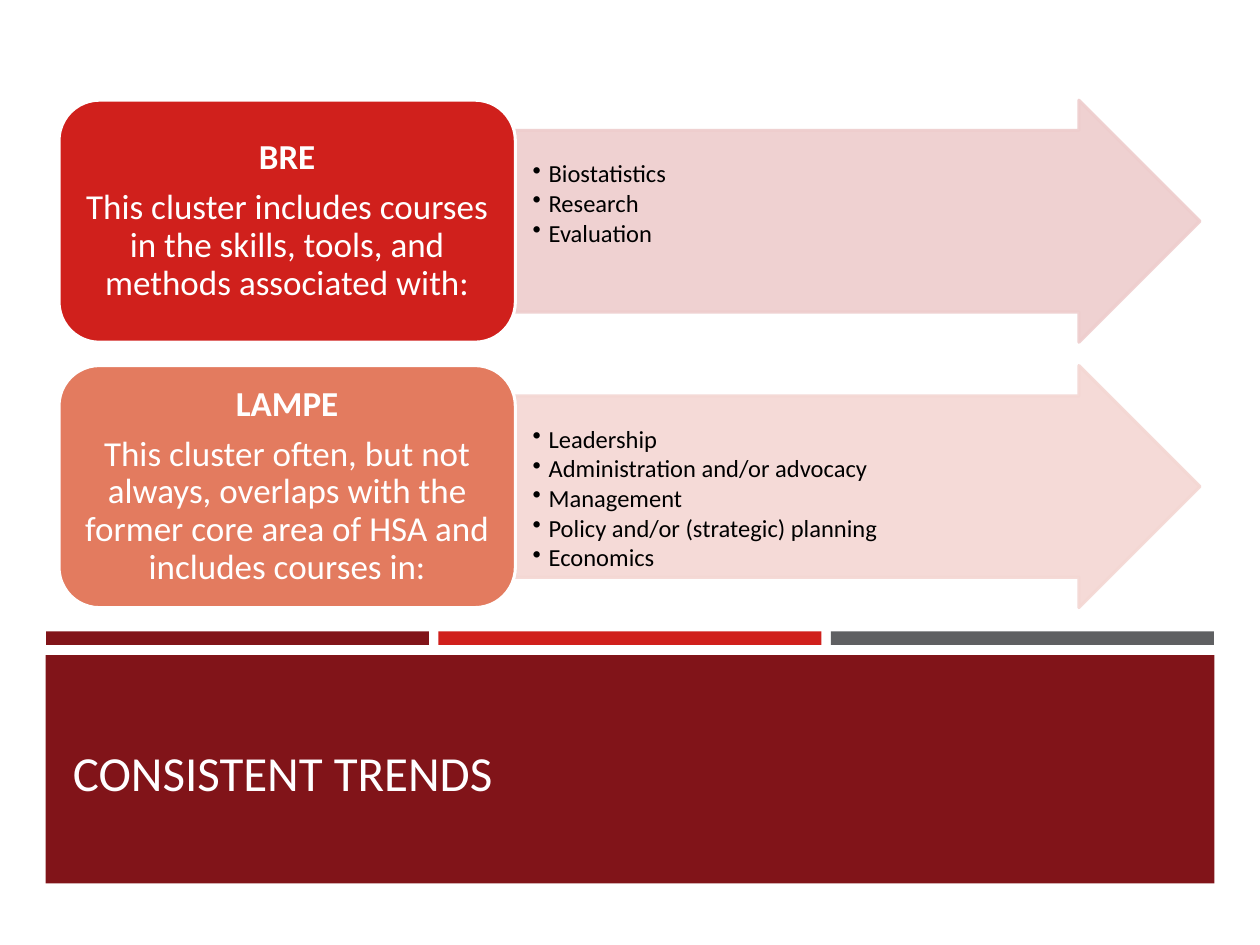
import dataclasses

import lxml.etree
import pptx
import pptx.dml.color
import pptx.enum.shapes
import pptx.enum.text
import pptx.oxml.ns
import pptx.util

Cm, Pt = pptx.util.Cm, pptx.util.Pt
SHAPES = pptx.enum.shapes.MSO_SHAPE
ANCHOR = pptx.enum.text.MSO_ANCHOR
ALIGN = pptx.enum.text.PP_ALIGN
qn = pptx.oxml.ns.qn


@dataclasses.dataclass(frozen=True)
class Theme:
    font: str = "Calibri"
    maroon: str = "811419"
    red: str = "D0201C"
    gray: str = "5F6062"
    coral: str = "E37B5F"
    pale_red: str = "EECDCD"
    pale_coral: str = "F4D7D3"
    white: str = "FFFFFF"
    title_white: str = "FFFEFF"
    black: str = "000000"
    title_size: float = 28
    cluster_size: float = 20
    bullet_size: float = 14
    outline: float = 1.75


class SlideBuilder:
    def __init__(self, page, theme):
        self.page = page
        self.theme = theme

    def shape(self, kind, left, top, width, height, fill, line=None, opacity=None):
        shape = self.page.shapes.add_shape(kind, Cm(left), Cm(top), Cm(width), Cm(height))
        shape.shadow.inherit = False
        shape.fill.solid()
        shape.fill.fore_color.rgb = pptx.dml.color.RGBColor.from_string(fill)
        if line:
            shape.line.color.rgb = pptx.dml.color.RGBColor.from_string(line)
            shape.line.width = Pt(self.theme.outline)
        else:
            shape.line.fill.background()
        if opacity:
            for color in shape.element.spPr.iter(qn("a:srgbClr")):
                lxml.etree.SubElement(color, qn("a:alpha"), val=str(opacity * 1000))
        return shape

    def frame(self, shape, anchor, side, top, bottom):
        frame = shape.text_frame
        frame.word_wrap = True
        frame.vertical_anchor = anchor
        frame.margin_left = frame.margin_right = Cm(side)
        frame.margin_top, frame.margin_bottom = Cm(top), Cm(bottom)
        return frame

    def style(self, para, size, color, align, after=0, spacing=1.0, bold=False):
        para.alignment = align
        para.line_spacing = spacing
        para.space_after = Pt(after)
        para.font.name = self.theme.font
        para.font.size = Pt(size)
        para.font.bold = bold
        para.font.color.rgb = pptx.dml.color.RGBColor.from_string(color)

    def paragraphs(self, frame, texts):
        for number, text in enumerate(texts):
            para = frame.add_paragraph() if number else frame.paragraphs[0]
            para.text = text
            yield para

    def title(self, text, left, top, width, height):
        box = self.page.shapes.add_textbox(Cm(left), Cm(top), Cm(width), Cm(height))
        frame = self.frame(box, ANCHOR.BOTTOM, 0.25, 0.13, 0.13)
        for para in self.paragraphs(frame, [text]):
            self.style(para, self.theme.title_size, self.theme.title_white, ALIGN.LEFT)

    def arrow(self, left, top, width, height, color, bullets):
        arrow = self.shape(SHAPES.RIGHT_ARROW, left, top, width, height, color, color, 90)
        arrow.adjustments[0], arrow.adjustments[1] = 0.75, 0.5
        frame = self.frame(arrow, ANCHOR.TOP, 0.03, 0.63, 0.03)
        for para in self.paragraphs(frame, bullets):
            para.level = 1
            properties = para._p.get_or_add_pPr()
            properties.set("marL", str(Cm(0.64)))
            properties.set("indent", str(-Cm(0.32)))
            lxml.etree.SubElement(properties, qn("a:buChar"), char="•")
            self.style(para, self.theme.bullet_size, self.theme.black, ALIGN.LEFT, 1.8, 0.9)

    def cluster(self, left, top, width, height, color, name, description):
        card = self.shape(SHAPES.ROUNDED_RECTANGLE, left, top, width, height,
                          color, self.theme.white)
        frame = self.frame(card, ANCHOR.MIDDLE, 0.2, 0.1, 0.1)
        for para in self.paragraphs(frame, [name, description]):
            self.style(para, self.theme.cluster_size, self.theme.white, ALIGN.CENTER,
                       6.8, 0.9, bold=para.text == name)


def main():
    theme = Theme()
    deck = pptx.Presentation()
    deck.slide_width, deck.slide_height = Cm(25.4), Cm(19.05)
    builder = SlideBuilder(deck.slides.add_slide(deck.slide_layouts[6]), theme)

    # Accent bars above the title band
    for column, color in enumerate([theme.maroon, theme.red, theme.gray]):
        builder.shape(SHAPES.RECTANGLE, 0.93 + column * 7.91, 12.73, 7.72, 0.27, color)

    # Title band
    builder.shape(SHAPES.RECTANGLE, 0.92, 13.21, 23.56, 4.6, theme.maroon)
    builder.title("CONSISTENT TRENDS", 1.22, 13.46, 22.99, 2.82)

    # Course clusters, each with an arrow listing its subjects
    clusters = [
        (theme.red, theme.pale_red, "BRE",
         "This cluster includes courses in the skills, tools, and methods associated with:",
         ["Biostatistics", "Research", "Evaluation"]),
        (theme.coral, theme.pale_coral, "LAMPE",
         "This cluster often, but not always, overlaps with the former core area of HSA "
         "and includes courses in:",
         ["Leadership", "Administration and/or advocacy", "Management",
          "Policy and/or (strategic) planning", "Economics"]),
    ]
    card_left, card_width, row_height = 1.19, 9.2, 4.88
    for row, (color, pale, name, description, subjects) in enumerate(clusters):
        top = 2.02 + row * 5.35
        builder.arrow(card_left + card_width, top, 13.8, row_height, pale, subjects)
        builder.cluster(card_left, top, card_width, row_height, color, name, description)

    deck.save("out.pptx")


if __name__ == "__main__":
    main()
